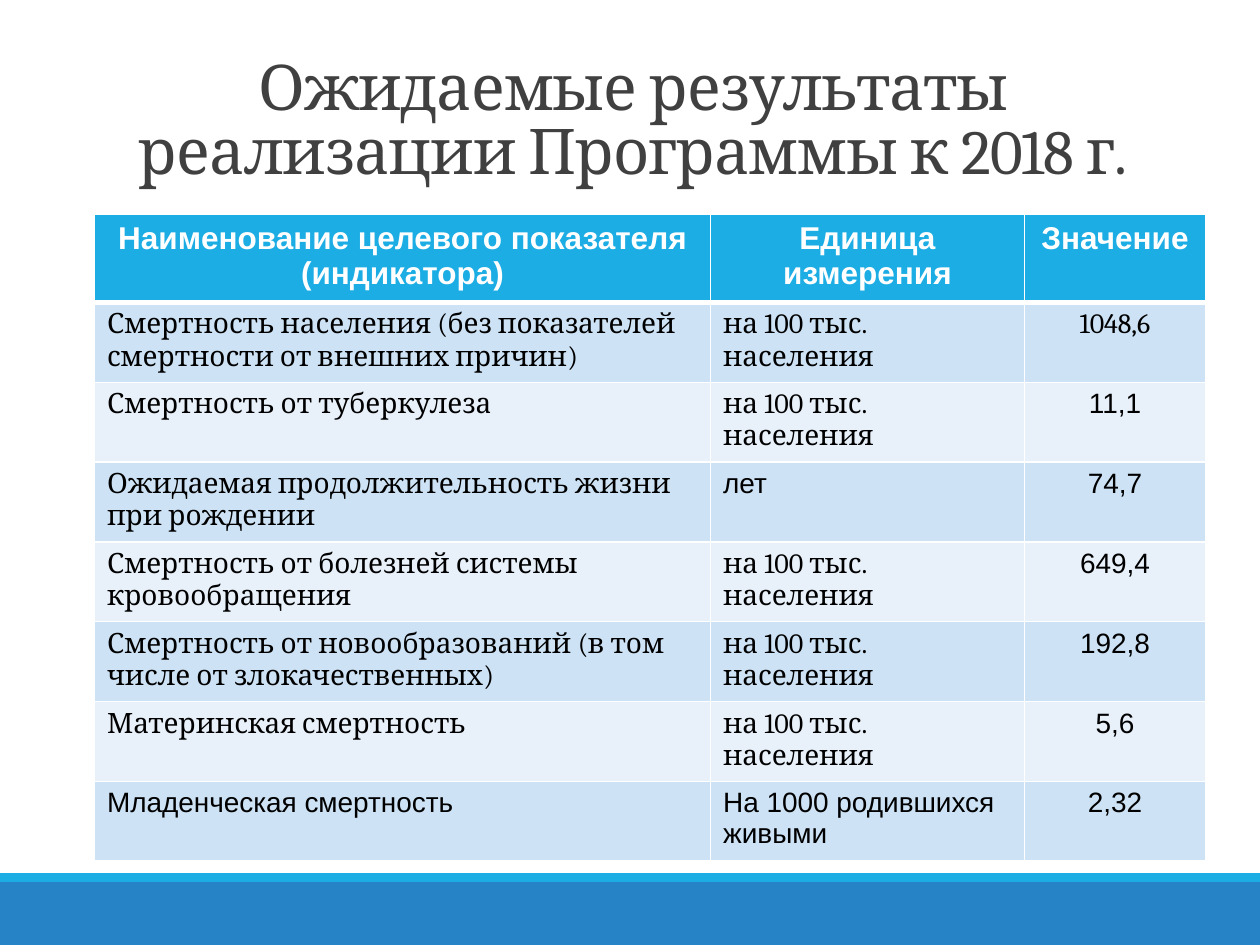
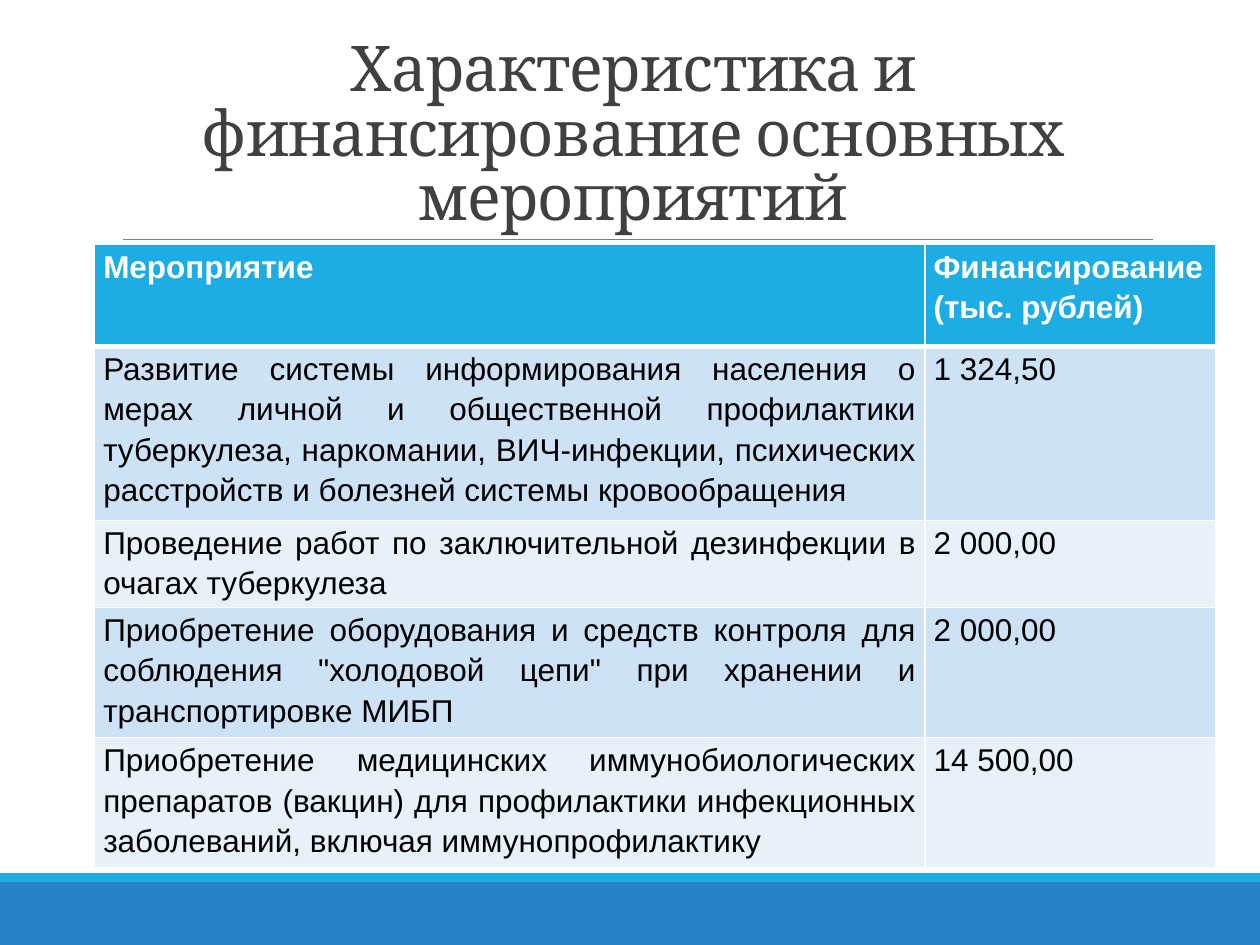
from dataclasses import dataclass
from typing import NamedTuple

from lxml.etree import SubElement
from pptx import Presentation
from pptx.dml.color import RGBColor
from pptx.enum.shapes import MSO_CONNECTOR, MSO_SHAPE
from pptx.enum.text import MSO_ANCHOR, PP_ALIGN
from pptx.oxml.ns import qn
from pptx.util import Inches, Pt

# Shared colours and fonts
WHITE = RGBColor(0xFF, 0xFF, 0xFF)
BLACK = RGBColor(0x00, 0x00, 0x00)
TITLE_GREY = RGBColor(0x40, 0x40, 0x40)
RULE_GREY = RGBColor(0x80, 0x80, 0x80)
CYAN = RGBColor(0x1C, 0xAD, 0xE4)
BLUE = RGBColor(0x26, 0x83, 0xC6)
STRIPES = (RGBColor(0xCD, 0xE3, 0xF5), RGBColor(0xE8, 0xF1, 0xFA))
SERIF, SANS = "Cambria", "Arial"

# Slide grid: 100 columns by 75 rows
COLS, ROWS = 100, 75
SLIDE_W, SLIDE_H = Inches(10), Inches(7.5)
LEFT, TOP = 7.5, 3.1


def x(cols: float) -> int:
    return round(SLIDE_W * cols / COLS)


def y(rows: float) -> int:
    return round(SLIDE_H * rows / ROWS)


class Band(NamedTuple):
    row: float
    rows: float
    color: RGBColor


class Cell(NamedTuple):
    text: str
    font: str = SANS


@dataclass(frozen=True)
class TableStyle:
    widths: tuple[float, ...]
    heights: tuple[float, ...]
    aligns: tuple[PP_ALIGN, ...]
    header_align: PP_ALIGN
    body_size: int
    margin_x: float
    margin_y: float
    spacing: float


@dataclass(frozen=True)
class TableSlide:
    title: str
    title_bottom: float
    table_top: float
    style: TableStyle
    header: tuple[str, ...]
    body: tuple[tuple[Cell, ...], ...]


BANDS = (Band(70, 5, BLUE), Band(69.3, 0.7, CYAN))
PER_100K = Cell("на 100 тыс. населения", SERIF)
LINE_ROWS = 3.22

RESULTS = TableSlide(
    title="Ожидаемые результаты реализации Программы к 2018 г.",
    title_bottom=15.4,
    table_top=17,
    style=TableStyle(
        widths=(48.9, 24.9, 14.4),
        heights=(6.9,) + (6.2,) * 7,
        aligns=(PP_ALIGN.LEFT, PP_ALIGN.LEFT, PP_ALIGN.CENTER),
        header_align=PP_ALIGN.CENTER,
        body_size=16, margin_x=1, margin_y=0.5, spacing=1.0,
    ),
    header=("Наименование целевого показателя (индикатора)",
            "Единица измерения", "Значение"),
    body=(
        (Cell("Смертность населения (без показателей смертности от внешних причин)", SERIF),
         PER_100K, Cell("1048,6", SERIF)),
        (Cell("Смертность от туберкулеза", SERIF), PER_100K, Cell("11,1")),
        (Cell("Ожидаемая продолжительность жизни при рождении", SERIF),
         Cell("лет"), Cell("74,7")),
        (Cell("Смертность от болезней системы кровообращения", SERIF),
         PER_100K, Cell("649,4")),
        (Cell("Смертность от новообразований (в том числе от злокачественных)", SERIF),
         PER_100K, Cell("192,8")),
        (Cell("Материнская смертность", SERIF), PER_100K, Cell("5,6")),
        (Cell("Младенческая смертность"), Cell("На 1000 родившихся живыми"),
         Cell("2,32")),
    ),
)

FUNDING = TableSlide(
    title="Характеристика и финансирование основных мероприятий",
    title_bottom=19,
    table_top=19.4,
    style=TableStyle(
        widths=(65.9, 23.1),
        heights=(8.1,) + tuple(lines * LINE_ROWS for lines in (4, 2, 3, 3)),
        aligns=(PP_ALIGN.JUSTIFY,) * 2,
        header_align=PP_ALIGN.JUSTIFY,
        body_size=18, margin_x=0.7, margin_y=0, spacing=1.15,
    ),
    header=("Мероприятие", "Финансирование (тыс. рублей)"),
    body=(
        (Cell("Развитие системы информирования населения о мерах личной и "
              "общественной профилактики туберкулеза, наркомании, ВИЧ-инфекции, "
              "психических расстройств и болезней системы кровообращения"),
         Cell("1 324,50")),
        (Cell("Проведение работ по заключительной дезинфекции в очагах туберкулеза"),
         Cell("2 000,00")),
        (Cell("Приобретение оборудования и средств контроля для соблюдения "
              "\"холодовой цепи\" при хранении и транспортировке МИБП"),
         Cell("2 000,00")),
        (Cell("Приобретение медицинских иммунобиологических препаратов (вакцин) "
              "для профилактики инфекционных заболеваний, включая иммунопрофилактику"),
         Cell("14 500,00")),
    ),
)


def add_frame(s) -> None:
    """Draw the footer bands and the rule under the title."""
    for band in BANDS:
        sp = s.shapes.add_shape(MSO_SHAPE.RECTANGLE, 0, y(band.row),
                                x(COLS), y(band.rows))
        sp.shadow.inherit = False
        sp.fill.solid()
        sp.fill.fore_color.rgb = band.color
        sp.line.fill.background()
    rule = s.shapes.add_connector(MSO_CONNECTOR.STRAIGHT,
                                  x(9.8), y(19), x(91.5), y(19))
    rule.line.color.rgb = RULE_GREY
    rule.line.width = Pt(0.5)
    SubElement(rule._element.spPr, qn("a:effectLst"))


def add_title(s, text: str, bottom: float) -> None:
    sp = s.shapes.add_textbox(x(9), y(TOP), x(82.5), y(bottom - TOP))
    tf = sp.text_frame
    tf.word_wrap = True
    tf.vertical_anchor = MSO_ANCHOR.BOTTOM
    p = tf.paragraphs[0]
    p.alignment = PP_ALIGN.CENTER
    p.line_spacing = 0.85
    p.font.name, p.font.size = SERIF, Pt(36)
    p.font.color.rgb = TITLE_GREY
    r = p.add_run()
    r.text = text
    r._r.get_or_add_rPr().set("spc", "-50")


def set_borders(cell, top: float, bottom: float) -> None:
    tc_pr = cell._tc.get_or_add_tcPr()
    for side, width in (("L", 1), ("R", 1), ("T", top), ("B", bottom)):
        ln = SubElement(tc_pr, qn(f"a:ln{side}"), w=str(Pt(width)))
        fill = SubElement(ln, qn("a:solidFill"))
        SubElement(fill, qn("a:srgbClr"), val=str(WHITE))


def fill_cell(cell, content: Cell, row: int, align: PP_ALIGN,
              style: TableStyle) -> None:
    is_header = row == 0
    set_borders(cell, top=3 if row == 1 else 1, bottom=3 if is_header else 1)
    cell.fill.solid()
    cell.fill.fore_color.rgb = CYAN if is_header else STRIPES[(row - 1) % 2]
    cell.margin_left = cell.margin_right = x(style.margin_x)
    cell.margin_top = cell.margin_bottom = y(style.margin_y)
    p = cell.text_frame.paragraphs[0]
    p.text = content.text
    p.alignment = align
    p.line_spacing = style.spacing
    p.font.name = content.font
    p.font.size = Pt(18 if is_header else style.body_size)
    p.font.bold = is_header
    p.font.color.rgb = WHITE if is_header else BLACK


def add_data_table(s, page: TableSlide) -> None:
    style = page.style
    rows = (tuple(Cell(text) for text in page.header),) + page.body
    table = s.shapes.add_table(
        len(rows), len(style.widths), x(LEFT), y(page.table_top),
        x(sum(style.widths)), y(sum(style.heights))).table
    for column, width in zip(table.columns, style.widths):
        column.width = x(width)
    for i, (row, height) in enumerate(zip(rows, style.heights)):
        table.rows[i].height = y(height)
        for j, content in enumerate(row):
            align = style.aligns[j] if i else style.header_align
            fill_cell(table.cell(i, j), content, i, align, style)


def main() -> None:
    prs = Presentation()
    prs.slide_width, prs.slide_height = SLIDE_W, SLIDE_H
    for page in (RESULTS, FUNDING):
        s = prs.slides.add_slide(prs.slide_layouts[6])
        add_frame(s)
        add_title(s, page.title, page.title_bottom)
        add_data_table(s, page)
    prs.save("out.pptx")


if __name__ == "__main__":
    main()
